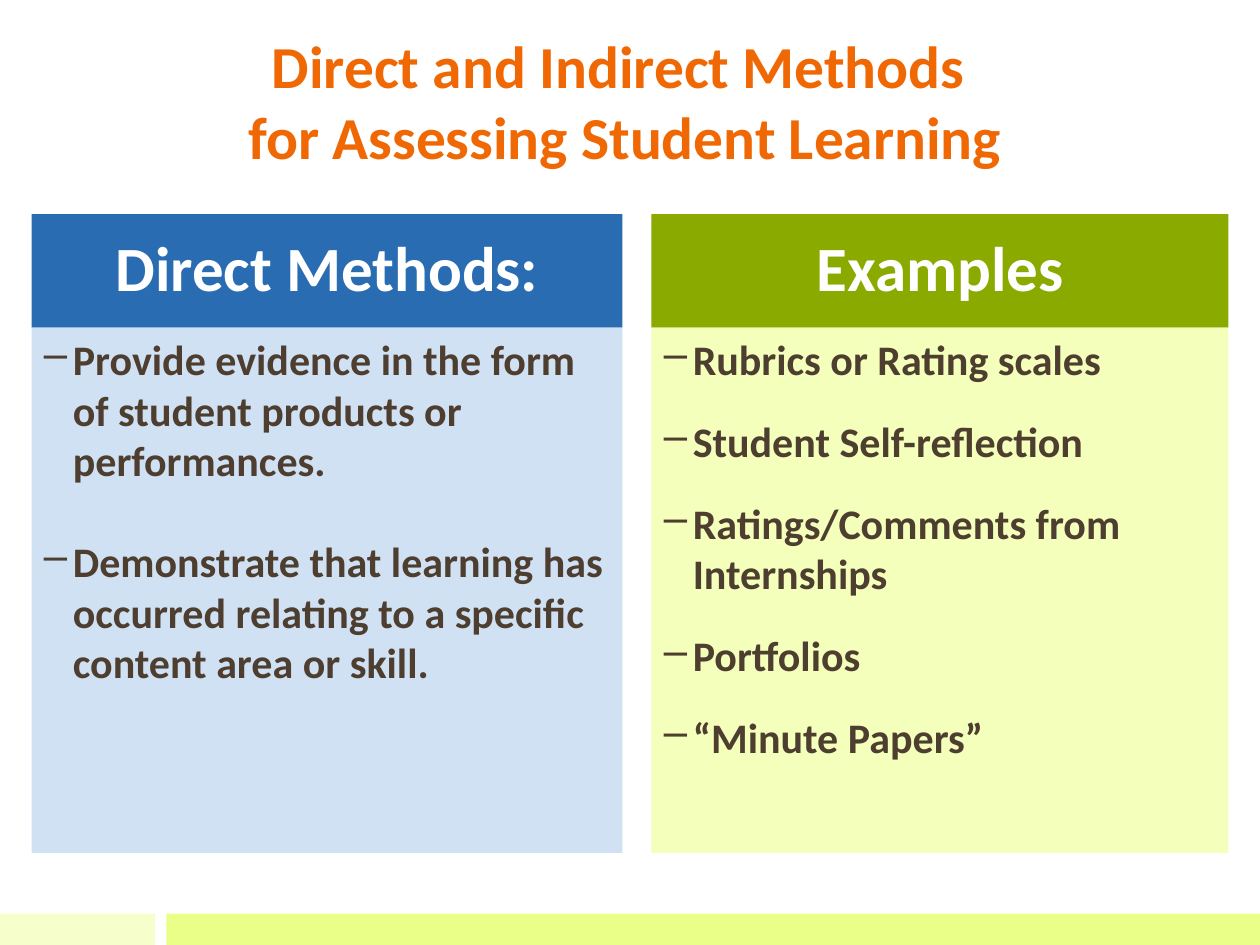
import pptx
import pptx.util
import pptx.dml.color
import pptx.enum.shapes
import pptx.enum.text
import lxml.etree

Pt = pptx.util.Pt
RGB = pptx.dml.color.RGBColor
ALIGN = pptx.enum.text.PP_ALIGN
ANCHOR = pptx.enum.text.MSO_ANCHOR

WHITE = RGB(0xFF, 0xFF, 0xFF)
ORANGE = RGB(0xEF, 0x68, 0x03)
BROWN = RGB(0x4D, 0x3E, 0x2F)
BLUE = RGB(0x2A, 0x6C, 0xB2)
SKY = RGB(0xD0, 0xE1, 0xF4)
GREEN = RGB(0x8B, 0xAA, 0x00)
LIME = RGB(0xF3, 0xFF, 0xBB)
PALE = RGB(0xF6, 0xFF, 0xCC)
BRIGHT = RGB(0xE9, 0xFF, 0x88)

TITLE = {"name": "Calibri", "bold": True, "size": Pt(34)}
HEAD = {"name": "Calibri", "bold": True, "size": Pt(36)}
ITEM = {"name": "Calibri", "bold": True, "size": Pt(24)}

TOP, HEAD_H, BODY_H = 122.4, 64.8, 300.24
INDENT = 16.56

# left, width, head, head fill, body fill, gap after items, items
PANELS = [
    (18, 337.68, "Direct Methods:", BLUE, SKY, 29, [
        "Provide evidence in the form of student products or performances.",
        "Demonstrate that learning has occurred relating to a specific "
        "content area or skill."]),
    (372.24, 329.76, "Examples", GREEN, LIME, 18, [
        "Rubrics or Rating scales",
        "Student Self-reflection",
        "Ratings/Comments from Internships",
        "Portfolios",
        "“Minute Papers”"]),
]


def style(obj, form):
    for key, val in form.items():
        setattr(obj, key, val)


def write(para, text, font, color, form):
    para.text = text
    style(para, form)
    for run in para.runs:
        style(run.font, font)
        run.font.color.rgb = color


def add_box(slide, left, top, width, height, fill):
    box = slide.shapes.add_shape(
        pptx.enum.shapes.MSO_SHAPE.RECTANGLE,
        Pt(left), Pt(top), Pt(width), Pt(height))
    box.shadow.inherit = False
    box.fill.solid()
    box.fill.fore_color.rgb = fill
    box.line.fill.background()
    return box


def add_dash(para):
    props = para._p.get_or_add_pPr()
    props.set("marL", str(Pt(INDENT)))
    props.set("indent", str(-Pt(INDENT)))
    mark = lxml.etree.SubElement(props, pptx.oxml.ns.qn("a:buChar"))
    mark.set("char", "–")


def set_title(slide, text):
    title = slide.shapes.title
    style(title, {"left": Pt(12.24), "top": Pt(21.6),
                  "width": Pt(689.76), "height": Pt(79.92)})
    frame = title.text_frame
    style(frame, {"vertical_anchor": ANCHOR.BOTTOM, "word_wrap": True,
                  "auto_size": pptx.enum.text.MSO_AUTO_SIZE.NONE})
    write(frame.paragraphs[0], text, TITLE, ORANGE,
          {"alignment": ALIGN.CENTER})


def add_panel(slide, left, width, head, dark, light, gap, items):
    # Heading band
    band = add_box(slide, left, TOP, width, HEAD_H, dark)
    band.text_frame.vertical_anchor = ANCHOR.MIDDLE
    write(band.text_frame.paragraphs[0], head, HEAD, WHITE,
          {"alignment": ALIGN.CENTER, "line_spacing": 0.9})

    # Dashed list
    frame = add_box(slide, left, TOP + HEAD_H, width, BODY_H,
                    light).text_frame
    frame.vertical_anchor = ANCHOR.TOP
    for num, text in enumerate(items):
        para = frame.add_paragraph() if num else frame.paragraphs[0]
        write(para, text, ITEM, BROWN,
              {"alignment": ALIGN.LEFT, "space_after": Pt(gap)})
        add_dash(para)


def main():
    deck = pptx.Presentation()
    style(deck, {"slide_width": Pt(720), "slide_height": Pt(540)})
    slide = deck.slides.add_slide(deck.slide_layouts[5])

    # Footer bars
    add_box(slide, 0, 522, 88.56, 18, PALE)
    add_box(slide, 95.04, 522, 624.96, 18, BRIGHT)

    # Title and panels
    set_title(slide, "Direct and Indirect Methods \v"
                     "for Assessing Student Learning")
    for panel in PANELS:
        add_panel(slide, *panel)

    deck.save("out.pptx")


if __name__ == "__main__":
    main()
